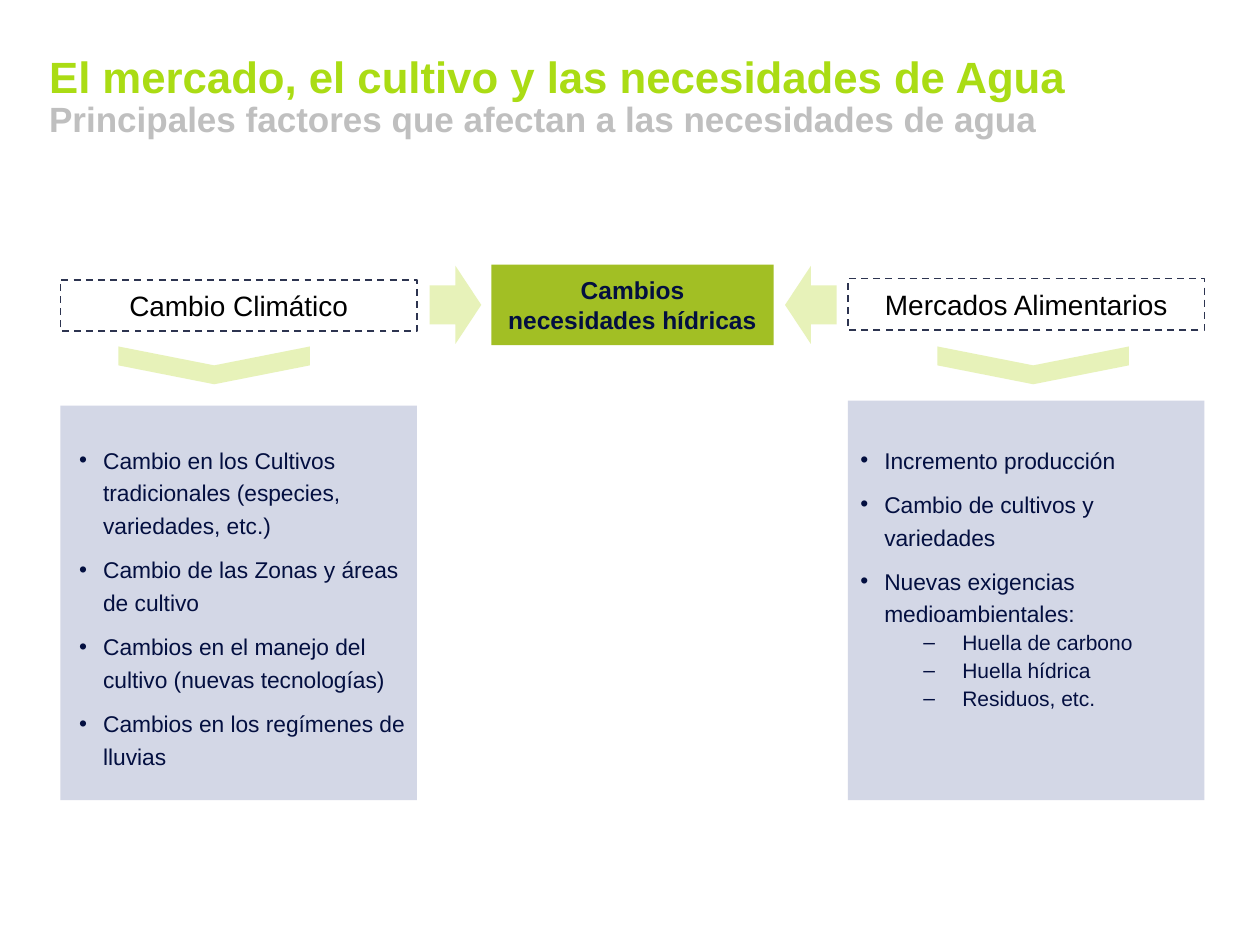
from dataclasses import dataclass

from lxml import etree
from pptx import Presentation
from pptx.dml.color import RGBColor
from pptx.enum.dml import MSO_LINE
from pptx.enum.shapes import MSO_SHAPE
from pptx.enum.text import MSO_ANCHOR, PP_ALIGN
from pptx.oxml.ns import qn
from pptx.util import Inches, Pt

RECTANGLE = MSO_SHAPE.RECTANGLE
ARROW = MSO_SHAPE.RIGHT_ARROW
CHEVRON = MSO_SHAPE.CHEVRON
DASH = MSO_LINE.DASH
MIDDLE = MSO_ANCHOR.MIDDLE
CENTER = PP_ALIGN.CENTER

FONT = "Arial"
NAVY = "030F40"
PALE_GREEN = "E7F2B9"
COLUMN_WIDTH = 2.83
PANEL_BOTTOM = 6.35


@dataclass(frozen=True)
class Area:
    left: float
    top: float
    width: float
    height: float

    def lengths(self) -> tuple:
        return tuple(Inches(n) for n in (self.left, self.top, self.width, self.height))


@dataclass(frozen=True)
class BulletStyle:
    mark: str
    level: int
    size: float
    margin: float
    hanging: float
    line_spacing: float
    space_before: float


@dataclass(frozen=True)
class Factor:
    heading: str
    left: float
    heading_top: float
    panel_top: float
    list_area: Area
    chevron_left: float
    arrow_left: float
    arrow_rotation: int
    items: tuple
    subitems: tuple = ()


MAIN_BULLET = BulletStyle("•", 0, 13, 0.19, 0.19, 1.2, 6.5)
SUB_BULLET = BulletStyle("–", 1, 12, 0.81, 0.31, 1.1, 0)

FACTORS = (
    Factor(
        "Cambio Climático", 0.48, 2.22, 3.22, Area(0.53, 3.45, 2.79, 2.89),
        1.55, 3.41, 0,
        (
            "Cambio en los Cultivos tradicionales (especies, variedades, etc.)",
            "Cambio de las Zonas y áreas de cultivo",
            "Cambios en el manejo del cultivo (nuevas tecnologías)",
            "Cambios en los regímenes de lluvias",
        ),
    ),
    Factor(
        "Mercados Alimentarios", 6.73, 2.21, 3.18, Area(6.73, 3.45, 2.83, 2.47),
        8.05, 6.23, 180,
        (
            "Incremento producción",
            "Cambio de cultivos y variedades",
            "Nuevas exigencias medioambientales:",
        ),
        ("Huella de carbono", "Huella hídrica", "Residuos, etc."),
    ),
)


def color(value: str) -> RGBColor:
    return RGBColor.from_string(value)


def style_text(para, size: float, value: str, bold: bool = False) -> None:
    for span in para.runs:
        span.font.name = FONT
        span.font.size = Pt(size)
        span.font.bold = bold
        span.font.color.rgb = color(value)


def add_block(page, kind, area: Area, fill: str = "", rotation: int = 0):
    shape = page.shapes.add_shape(kind, *area.lengths())
    shape.shadow.inherit = False
    shape.rotation = rotation
    shape.line.fill.background()
    if fill:
        shape.fill.solid()
        shape.fill.fore_color.rgb = color(fill)
    else:
        shape.fill.background()
    return shape


def add_label(shape, text: str, size: float, value: str, bold: bool = False) -> None:
    frame = shape.text_frame
    frame.word_wrap = True
    frame.vertical_anchor = MIDDLE
    frame.text = text
    para = frame.paragraphs[0]
    para.alignment = CENTER
    style_text(para, size, value, bold)


def add_text_box(page, area: Area, lines: list):
    frame = page.shapes.add_textbox(*area.lengths()).text_frame
    frame.word_wrap = True
    frame.text = "\n".join(lines)
    return frame


def add_title(page) -> None:
    frame = add_text_box(page, Area(0.39, 0.44, 9.3, 0.77), [
        "El mercado, el cultivo y las necesidades de Agua",
        "Principales factores que afectan a las necesidades de agua",
    ])
    frame.margin_left = frame.margin_top = 0
    frame.margin_right = frame.margin_bottom = 0
    for para, size, value in zip(frame.paragraphs, (25, 20), ("AADC14", "BFBFBF")):
        para.line_spacing = 0.9
        style_text(para, size, value, True)


def set_bullet(para, style: BulletStyle) -> None:
    para.level = style.level
    para.line_spacing = style.line_spacing
    properties = para._p.get_or_add_pPr()
    properties.set("marL", str(Inches(style.margin)))
    properties.set("indent", str(-Inches(style.hanging)))
    etree.SubElement(properties, qn("a:buFont")).set("typeface", FONT)
    etree.SubElement(properties, qn("a:buChar")).set("char", style.mark)
    style_text(para, style.size, NAVY)


def add_list(page, factor: Factor) -> None:
    frame = add_text_box(page, factor.list_area, [*factor.items, *factor.subitems])
    for index, para in enumerate(frame.paragraphs):
        style = MAIN_BULLET if index < len(factor.items) else SUB_BULLET
        para.space_before = Pt(style.space_before if index else 0)
        set_bullet(para, style)


def add_factor(page, factor: Factor) -> None:
    panel_height = PANEL_BOTTOM - factor.panel_top
    panel = Area(factor.left, factor.panel_top, COLUMN_WIDTH, panel_height)
    add_block(page, RECTANGLE, panel, "D3D7E6")
    heading = add_block(
        page, RECTANGLE, Area(factor.left, factor.heading_top, COLUMN_WIDTH, 0.41)
    )
    heading.line.color.rgb = color("2D3450")
    heading.line.width = Pt(1)
    heading.line.dash_style = DASH
    add_label(heading, factor.heading, 16, "000000")
    add_list(page, factor)
    add_block(page, CHEVRON, Area(factor.chevron_left, 2.14, 0.3, 1.52), PALE_GREEN, 90)
    arrow = Area(factor.arrow_left, 2.11, 0.41, 0.62)
    add_block(page, ARROW, arrow, PALE_GREEN, factor.arrow_rotation)


def main() -> None:
    deck = Presentation()
    deck.slide_width = Inches(10)
    deck.slide_height = Inches(7.5)
    page = deck.slides.add_slide(deck.slide_layouts[6])
    add_title(page)
    for factor in FACTORS:
        add_factor(page, factor)
    center = add_block(page, RECTANGLE, Area(3.9, 2.1, 2.24, 0.64), "A2BF24")
    add_label(center, "Cambios necesidades hídricas", 14, NAVY, True)
    deck.save("out.pptx")


if __name__ == "__main__":
    main()
